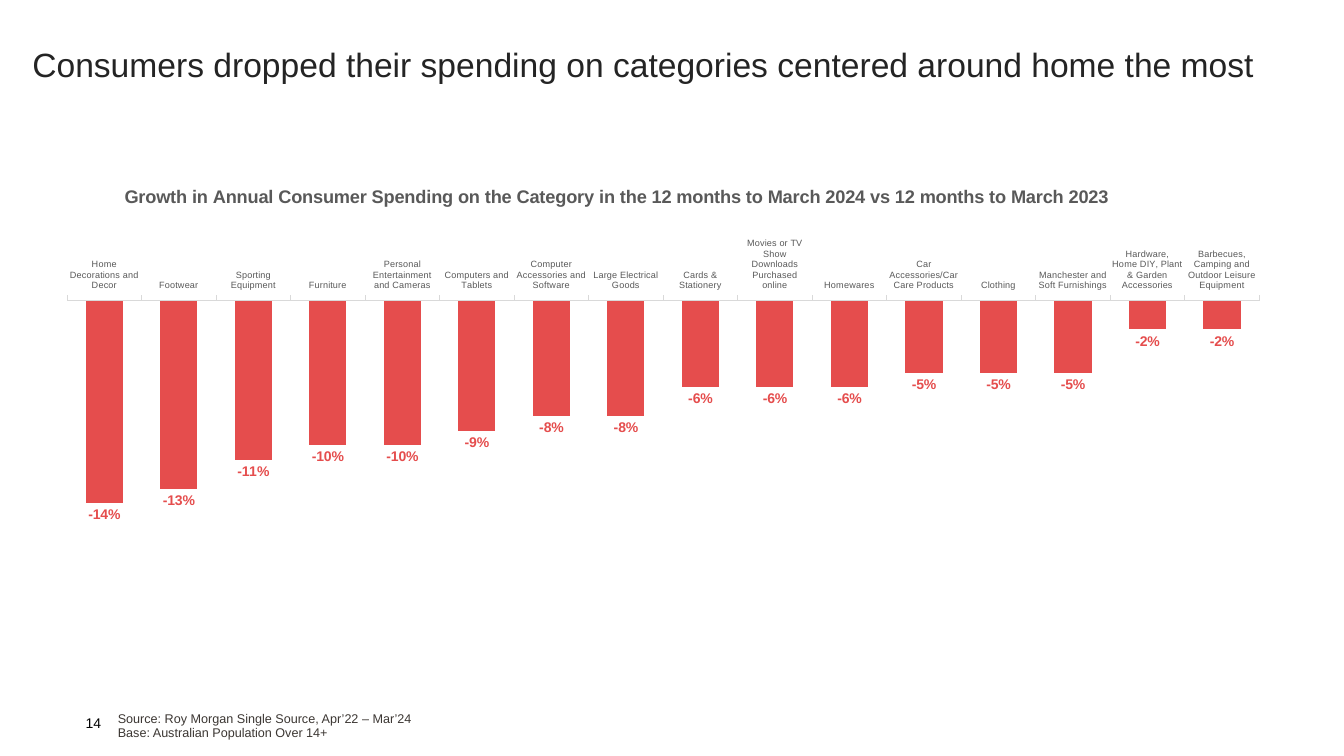
from lxml.etree import SubElement
from pptx import Presentation
from pptx.chart.data import CategoryChartData
from pptx.dml.color import RGBColor
from pptx.enum.chart import XL_CHART_TYPE, XL_LABEL_POSITION, XL_TICK_LABEL_POSITION, XL_TICK_MARK
from pptx.enum.text import MSO_ANCHOR, MSO_AUTO_SIZE, PP_ALIGN
from pptx.oxml.ns import qn
from pptx.util import Cm, Pt

FONT = "Arial"
BLACK = RGBColor(0x00, 0x00, 0x00)
TITLE_GREY = RGBColor(0x24, 0x24, 0x24)
CHART_GREY = RGBColor(0x59, 0x59, 0x59)
AXIS_GREY = RGBColor(0xD9, 0xD9, 0xD9)
SOURCE_GREY = RGBColor(0x3C, 0x37, 0x33)
RED = RGBColor(0xE5, 0x4D, 0x4D)

SPENDING_GROWTH = {
    "Home Decorations and Decor": -0.14,
    "Footwear": -0.13,
    "Sporting Equipment": -0.11,
    "Furniture": -0.10,
    "Personal Entertainment and Cameras": -0.10,
    "Computers and Tablets": -0.09,
    "Computer Accessories and Software": -0.08,
    "Large Electrical Goods": -0.08,
    "Cards & Stationery": -0.06,
    "Movies or TV Show Downloads Purchased online": -0.06,
    "Homewares": -0.06,
    "Car Accessories/Car Care Products": -0.05,
    "Clothing": -0.05,
    "Manchester and Soft Furnishings": -0.05,
    "Hardware, Home DIY, Plant & Garden Accessories": -0.02,
    "Barbecues, Camping and Outdoor Leisure Equipment": -0.02,
}


class SlideBuilder:
    """Adds consistently styled elements to one slide."""

    def __init__(self, presentation):
        self.slide = presentation.slides.add_slide(presentation.slide_layouts[5])

    def style(self, font, size, color, bold=False):
        font.name = FONT
        font.size = Pt(size)
        font.bold = bold
        font.color.rgb = color

    def place(self, element, settings):
        layout = element.find(qn("c:layout"))
        if layout is None:
            layout = SubElement(element, qn("c:layout"))
            element.remove(layout)
            text = element.find(qn("c:tx"))
            element.insert(0 if text is None else element.index(text) + 1, layout)
        manual = SubElement(layout, qn("c:manualLayout"))
        for name, value in settings.items():
            SubElement(manual, qn(f"c:{name}")).set("val", str(value))

    def title(self, text, left, top, width, height):
        shape = self.slide.shapes.title
        shape.left, shape.top, shape.width, shape.height = left, top, width, height
        frame = shape.text_frame
        frame.text = text
        frame.word_wrap = True
        frame.auto_size = MSO_AUTO_SIZE.NONE
        frame.vertical_anchor = MSO_ANCHOR.TOP
        paragraph = frame.paragraphs[0]
        paragraph.alignment = PP_ALIGN.LEFT
        paragraph.line_spacing = 1.12
        paragraph.space_before = Pt(0)
        self.style(paragraph.font, 24, TITLE_GREY)

    def text(self, lines, left, top, width, height, size, color, spacing=1.0):
        frame = self.slide.shapes.add_textbox(left, top, width, height).text_frame
        frame.word_wrap = True
        frame.text = "\n".join(lines)
        for paragraph in frame.paragraphs:
            paragraph.line_spacing = spacing
            self.style(paragraph.font, size, color)
        return frame

    def page_number(self, number, left, top, width, height):
        frame = self.text([str(number)], left, top, width, height, 10, BLACK)
        frame.word_wrap = False
        frame.vertical_anchor = MSO_ANCHOR.BOTTOM
        frame.margin_left = frame.margin_right = 0
        frame.margin_top = frame.margin_bottom = 0

    def column_chart(self, title, values, left, top, width, height):
        data = CategoryChartData(number_format="0%")
        data.categories = list(values)
        data.add_series("Series 1", list(values.values()))
        chart = self.slide.shapes.add_chart(
            XL_CHART_TYPE.COLUMN_CLUSTERED, left, top, width, height, data
        ).chart
        self.style(chart.font, 7, BLACK)
        chart.has_legend = False

        chart.has_title = True
        chart.chart_title.include_in_layout = False
        chart.chart_title.text_frame.text = title
        self.style(chart.chart_title.text_frame.paragraphs[0].font, 13, CHART_GREY, True)
        chart_element = chart.element.find(qn("c:chart"))
        self.place(
            chart_element.find(qn("c:title")),
            {"xMode": "edge", "yMode": "edge", "x": 0.13, "y": 0.17},
        )
        self.place(
            chart_element.find(qn("c:plotArea")),
            {"layoutTarget": "inner", "xMode": "edge", "yMode": "edge",
             "x": 0.089, "y": 0.386, "w": 0.903, "h": 0.528},
        )

        category_axis = chart.category_axis
        category_axis.has_major_gridlines = False
        category_axis.major_tick_mark = XL_TICK_MARK.INSIDE
        category_axis.tick_label_position = XL_TICK_LABEL_POSITION.HIGH
        category_axis.format.line.color.rgb = AXIS_GREY
        category_axis.format.line.width = Pt(0.75)
        self.style(category_axis.tick_labels.font, 6.5, CHART_GREY)

        value_axis = chart.value_axis
        value_axis.minimum_scale = -0.2
        value_axis.maximum_scale = 0
        value_axis.major_unit = 0.1
        value_axis.has_major_gridlines = False
        value_axis.visible = False

        plot = chart.plots[0]
        plot.gap_width = 100
        plot.vary_by_categories = False
        series = plot.series[0]
        series.invert_if_negative = False
        series.format.fill.solid()
        series.format.fill.fore_color.rgb = RED
        labels = series.data_labels
        labels.show_value = True
        labels.number_format = "0%"
        labels.number_format_is_linked = False
        labels.position = XL_LABEL_POSITION.OUTSIDE_END
        self.style(labels.font, 10, RED, True)


def main():
    presentation = Presentation()
    presentation.slide_width = Cm(33.87)
    presentation.slide_height = Cm(19.05)
    builder = SlideBuilder(presentation)
    builder.page_number(14, Cm(2.16), Cm(17.42), Cm(7.62), Cm(1.02))
    builder.column_chart(
        "Growth in Annual Consumer Spending on the Category "
        "in the 12 months to March 2024 vs 12 months to March 2023",
        SPENDING_GROWTH, Cm(-1.27), Cm(2.24), Cm(33.27), Cm(13.82),
    )
    builder.title(
        "Consumers dropped their spending on categories centered around home the most",
        Cm(0.56), Cm(0.86), Cm(33.27), Cm(3.25),
    )
    builder.text(
        ["Source: Roy Morgan Single Source, Apr’22 – Mar’24",
         "Base: Australian Population Over 14+"],
        Cm(2.72), Cm(17.83), Cm(8.69), Cm(1.63), 9, SOURCE_GREY, 0.9,
    )
    presentation.save("out.pptx")


if __name__ == "__main__":
    main()
